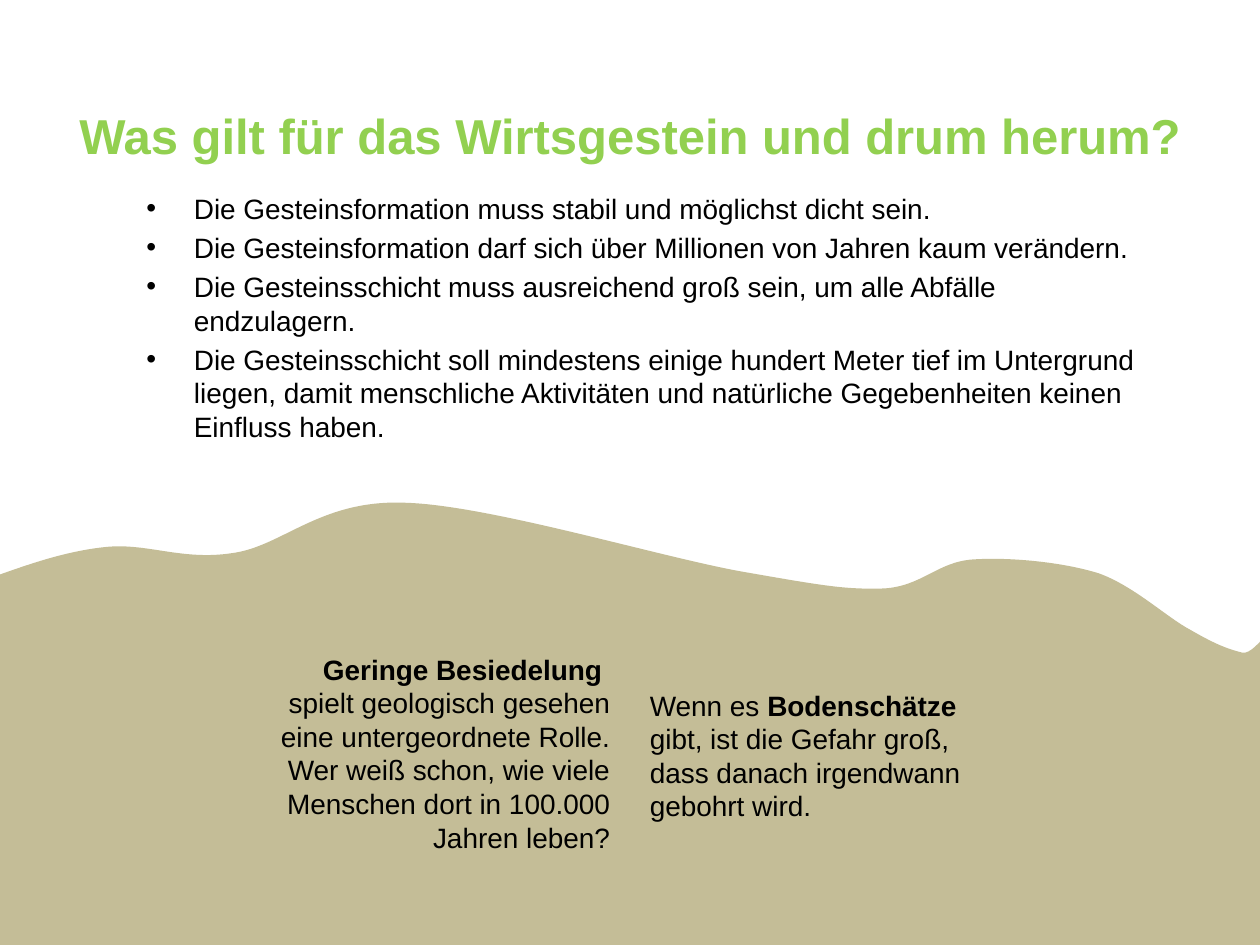
from lxml.etree import SubElement
from pptx import Presentation
from pptx.dml.color import RGBColor
from pptx.enum.shapes import MSO_SHAPE
from pptx.enum.text import MSO_ANCHOR, PP_ALIGN
from pptx.oxml.ns import qn
from pptx.util import Cm, Pt

COLORS = {"title": "92D050", "text": "000000", "ground": "C4BD97", "frame": "FFFFFF"}
CM_PER_INCH = 2.54

TITLE = "Was gilt für das Wirtsgestein und drum herum?"
REQUIREMENTS = [
    "Die Gesteinsformation muss stabil und möglichst dicht sein.",
    "Die Gesteinsformation darf sich über Millionen von Jahren kaum verändern.",
    "Die Gesteinsschicht muss ausreichend groß sein, um alle Abfälle endzulagern.",
    "Die Gesteinsschicht soll mindestens einige hundert Meter tief im Untergrund "
    "liegen, damit menschliche Aktivitäten und natürliche Gegebenheiten keinen "
    "Einfluss haben.",
]
# Each note holds paragraphs of (text, bold) runs
SETTLEMENT = [
    [("Geringe Besiedelung ", True)],
    [("spielt geologisch gesehen eine untergeordnete Rolle. Wer weiß schon, "
      "wie viele Menschen dort in 100.000 Jahren leben?", False)],
]
RESOURCES = [
    [("Wenn es ", False), ("Bodenschätze ", True),
     ("gibt, ist die Gefahr groß, dass danach irgendwann gebohrt wird.", False)],
]

# Ground outline in inches: two control points and an end point per curve,
# or only an end point for a straight line
GROUND_BOX = (-0.63, 3.99, 11.21, 3.62)
GROUND_START = (-0.03, 4.57)
GROUND_SURFACE = [
    (0.25, 4.47, 0.54, 4.37, 0.85, 4.34),
    (1.17, 4.31, 1.45, 4.45, 1.84, 4.39),
    (2.24, 4.34, 2.54, 3.96, 3.22, 3.99),
    (3.89, 4.01, 5.27, 4.43, 5.91, 4.54),
    (6.54, 4.65, 6.71, 4.68, 7.02, 4.67),
    (7.32, 4.65, 7.44, 4.46, 7.72, 4.44),
    (8.01, 4.42, 8.43, 4.46, 8.72, 4.55),
    (9.00, 4.65, 9.26, 4.90, 9.45, 5.00),
    (9.64, 5.11, 9.74, 5.15, 9.86, 5.18),
    (9.99, 5.20, 10.13, 4.80, 10.19, 5.16),
]
GROUND_BASE = [
    (10.25, 5.52, 10.24, 6.93, 10.24, 7.33),
    (10.24, 7.73, 11.03, 7.54, 10.18, 7.58),
    (9.33, 7.63, 5.12, 7.60, 5.12, 7.60),
    (-0.17, 7.56),
    (-1.08, 7.52, -0.35, 7.56, -0.35, 7.34),
    (-0.35, 7.13, -0.20, 6.70, -0.16, 6.28),
    (-0.13, 5.85, -0.14, 5.08, -0.13, 4.80),
    (-0.12, 4.53, -0.11, 4.66, -0.11, 4.64),
]


def inches_to_emu(values):
    return [Cm(value * CM_PER_INCH) for value in values]


class SlideBuilder:
    font_name = "Arial"
    text_size = Pt(16)
    title_size = Pt(28)

    def __init__(self, slide):
        self.slide = slide

    def color(self, name):
        return RGBColor.from_string(COLORS[name])

    def style(self, font, size, color):
        font.name = self.font_name
        font.size = size
        font.color.rgb = self.color(color)

    def title(self, text, box):
        title = self.slide.shapes.title
        title.left, title.top, title.width, title.height = map(Cm, box)
        frame = title.text_frame
        frame.text = text
        frame.vertical_anchor = MSO_ANCHOR.MIDDLE
        heading = frame.paragraphs[0]
        heading.alignment = PP_ALIGN.CENTER
        self.style(heading.font, self.title_size, "title")
        heading.font.bold = True

    def ground(self, box, start, segments):
        left, top, width, height = inches_to_emu(box)
        builder = self.slide.shapes.build_freeform(*inches_to_emu(start))
        builder.add_line_segments([inches_to_emu(segment[-2:]) for segment in segments])
        ground = builder.convert_to_shape()
        ground.left, ground.top, ground.width, ground.height = left, top, width, height

        # Bend the straight segments into curves
        outline = next(ground._element.iter(qn("a:path")))
        outline.clear()
        outline.set("w", str(width))
        outline.set("h", str(height))
        for number, values in enumerate([start, *segments]):
            kind = "cubicBezTo" if len(values) == 6 else "lnTo" if number else "moveTo"
            command = SubElement(outline, qn(f"a:{kind}"))
            lengths = inches_to_emu(values)
            for x, y in zip(lengths[::2], lengths[1::2]):
                SubElement(command, qn("a:pt"), x=str(x - left), y=str(y - top))
        SubElement(outline, qn("a:close"))

        ground.shadow.inherit = False
        ground.fill.solid()
        ground.fill.fore_color.rgb = self.color("ground")
        ground.line.fill.background()

    def bullets(self, items, box):
        bullet_list = self.slide.shapes.add_textbox(*map(Cm, box))
        bullet_list.line.color.rgb = self.color("frame")
        bullet_list.line.width = Pt(0.75)
        frame = bullet_list.text_frame
        frame.word_wrap = True
        frame.text = "\n".join(items)
        for item in frame.paragraphs:
            self.style(item.font, self.text_size, "text")
            item.space_before = Pt(3.2)
            properties = item._p.get_or_add_pPr()
            properties.set("marL", str(Cm(0.96)))
            properties.set("indent", str(-Cm(0.96)))
            defaults = properties.find(qn("a:defRPr"))
            defaults.addprevious(SubElement(properties, qn("a:buFont"), typeface=self.font_name))
            defaults.addprevious(SubElement(properties, qn("a:buChar"), char="•"))

    def note(self, paragraphs, box, alignment):
        note = self.slide.shapes.add_shape(MSO_SHAPE.RIGHT_ARROW, *map(Cm, box))
        note.adjustments[0], note.adjustments[1] = 1, 0
        note.shadow.inherit = False
        note.fill.background()
        note.line.fill.background()
        frame = note.text_frame
        frame.word_wrap = True
        frame.vertical_anchor = MSO_ANCHOR.MIDDLE
        for number, runs in enumerate(paragraphs):
            paragraph = frame.add_paragraph() if number else frame.paragraphs[0]
            paragraph.alignment = alignment
            for text, bold in runs:
                run = paragraph.add_run()
                run.text = text
                self.style(run.font, self.text_size, "text")
                run.font.bold = bold


def main():
    presentation = Presentation()
    presentation.slide_width, presentation.slide_height = Cm(25.4), Cm(19.05)
    title_only = presentation.slide_layouts[5]
    builder = SlideBuilder(presentation.slides.add_slide(title_only))

    # Ground, behind the notes
    builder.ground(GROUND_BOX, GROUND_START, GROUND_SURFACE + GROUND_BASE)

    # Title and requirements for the rock
    builder.title(TITLE, (1.27, 1.12, 22.86, 3.18))
    builder.bullets(REQUIREMENTS, (2.7, 3.73, 20.8, 6.07))

    # Notes inside the ground
    builder.note(SETTLEMENT, (4.85, 12.78, 7.7, 4.8), PP_ALIGN.RIGHT)
    builder.note(RESOURCES, (12.85, 12.33, 7.7, 5.79), PP_ALIGN.LEFT)

    presentation.save("out.pptx")


if __name__ == "__main__":
    main()
